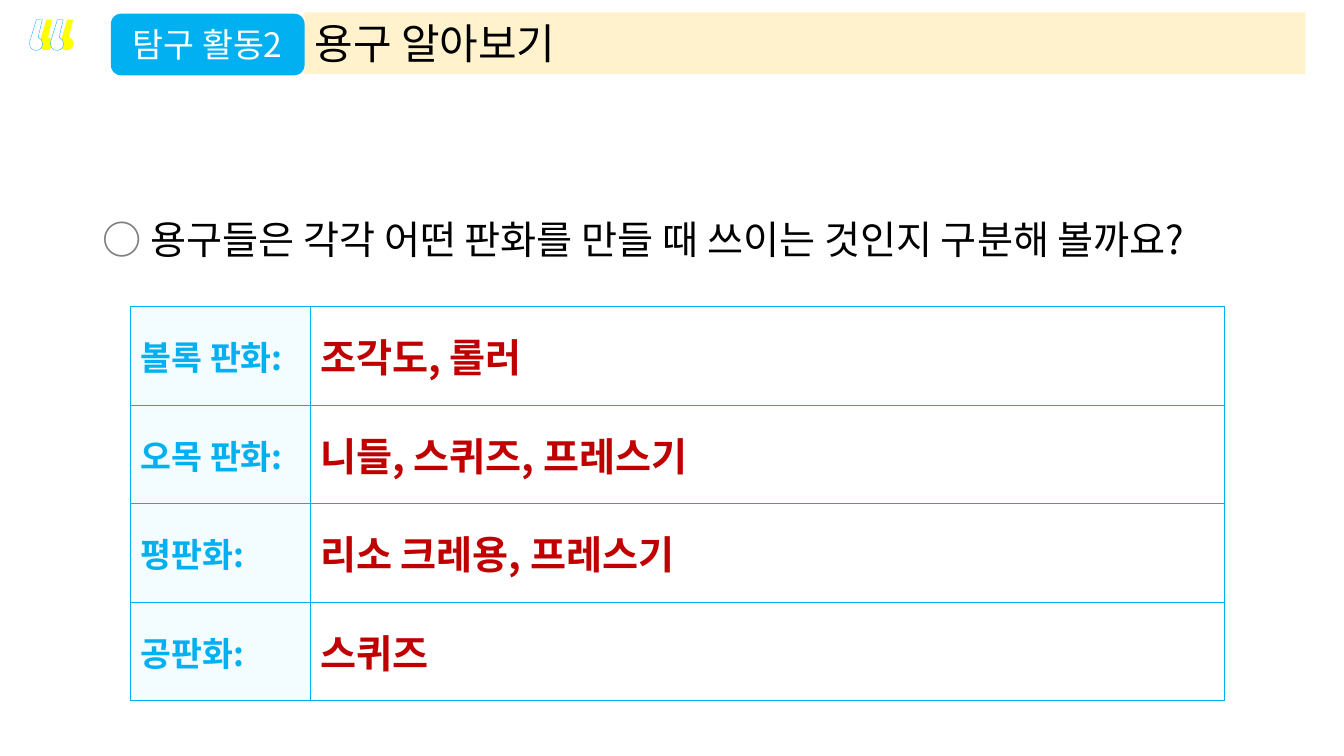
"""Builds a Korean lesson slide that sorts printmaking tools by print type."""
from pptx import Presentation
from pptx import util as u
from pptx.dml.color import RGBColor
from pptx.enum import shapes, text
from pptx.oxml import parse_xml
from pptx.oxml.ns import nsdecls

COLORS = {
    "sky": "00B0F0", "pale": "F3FCFF", "cream": "FFF2CC", "yellow": "FFFF00",
    "white": "FFFFFF", "black": "000000", "gray": "808080", "red": "C00000",
}
KOREAN = "Noto Sans CJK KR"
LATIN = "Montserrat"
PRINTS = [
    ("볼록 판화:", "조각도, 롤러"),
    ("오목 판화:", "니들, 스퀴즈, 프레스기"),
    ("평판화:", "리소 크레용, 프레스기"),
    ("공판화:", "스퀴즈"),
]


def rgb(name):
    """Return the named colour."""
    return RGBColor.from_string(COLORS[name])


def line_xml(tag, width, color):
    """Return a solid line element with a width in points."""
    return parse_xml(
        f'<a:{tag} {nsdecls("a")} w="{u.Pt(width)}"><a:solidFill>'
        f'<a:srgbClr val="{COLORS[color]}"/></a:solidFill></a:{tag}>')


def style(run, size, color, bold=False, face=KOREAN):
    """Format a run, with the face for Latin and East Asian text."""
    run.font.size = u.Pt(size)
    run.font.bold = bold
    run.font.color.rgb = rgb(color)
    run.font.name = face
    run._r.get_or_add_rPr().append(
        parse_xml(f'<a:ea {nsdecls("a")} typeface="{face}"/>'))


def place(part, left, top, width, height):
    """Move and size a shape in points."""
    part.left, part.top = u.Pt(left), u.Pt(top)
    part.width, part.height = u.Pt(width), u.Pt(height)


def add_heading(slide, words):
    """Format the title placeholder as the cream heading bar."""
    heading = slide.shapes.title
    place(heading, 217.4, 8.8, 715, 44)
    heading.fill.solid()
    heading.fill.fore_color.rgb = rgb("cream")
    frame = heading.text_frame
    frame.text = words
    frame.auto_size = text.MSO_AUTO_SIZE.NONE
    frame.vertical_anchor = text.MSO_ANCHOR.MIDDLE
    line = frame.paragraphs[0]
    line.alignment = text.PP_ALIGN.LEFT
    line.line_spacing = 1.0
    style(line.runs[0], 30, "black")


def add_quote(slide, left, color, outline=None):
    """Add one large quotation mark."""
    quote = slide.shapes.add_textbox(
        u.Pt(left), u.Pt(-12.2), u.Pt(57), u.Pt(113.8))
    quote.text_frame.word_wrap = True
    quote.text_frame.text = "“"
    mark = quote.text_frame.paragraphs[0].runs[0]
    style(mark, 88, color, face=LATIN)
    if outline:
        mark._r.get_or_add_rPr().insert(0, line_xml("ln", 1, outline))


def add_badge(slide, words):
    """Add the rounded activity label."""
    badge = slide.shapes.add_shape(
        shapes.MSO_SHAPE.ROUNDED_RECTANGLE,
        u.Pt(79.2), u.Pt(9.8), u.Pt(138.4), u.Pt(44))
    badge.shadow.inherit = False
    badge.fill.solid()
    badge.fill.fore_color.rgb = rgb("sky")
    badge.line.fill.background()
    badge.text_frame.text = words
    badge.text_frame.vertical_anchor = text.MSO_ANCHOR.MIDDLE
    label = badge.text_frame.paragraphs[0]
    label.alignment = text.PP_ALIGN.CENTER
    style(label.runs[0], 24, "white")


def add_question(slide, bullet, words):
    """Add the question with its gray ring."""
    question = slide.shapes.add_textbox(
        u.Pt(66.2), u.Pt(133.2), u.Pt(861), u.Pt(53.3))
    question.text_frame.word_wrap = True
    line = question.text_frame.paragraphs[0]
    line.line_spacing = 1.5
    for part, color, bold in ((bullet, "gray", True), (words, "black", False)):
        run = line.add_run()
        run.text = part
        style(run, 28, color, bold)


def fill_cell(cell, words, size, color, background):
    """Write one table cell with a sky border."""
    cell.text = words
    cell.vertical_anchor = text.MSO_ANCHOR.MIDDLE
    cell.fill.solid()
    cell.fill.fore_color.rgb = rgb(background)
    style(cell.text_frame.paragraphs[0].runs[0], size, color, True)
    for index, side in enumerate(("lnL", "lnR", "lnT", "lnB")):
        cell._tc.get_or_add_tcPr().insert(index, line_xml(side, 0.5, "sky"))


def add_print_table(slide, prints):
    """Add the table of print types and their tools."""
    row_height = 70.4
    table = slide.shapes.add_table(
        len(prints), 2, u.Pt(93.2), u.Pt(219),
        u.Pt(781.6), u.Pt(row_height * len(prints))).table
    table.first_row = table.horz_banding = False
    for column, width in zip(table.columns, (128.2, 653.4)):
        column.width = u.Pt(width)
    for row, (kind, tools) in zip(table.rows, prints):
        row.height = u.Pt(row_height)
        fill_cell(row.cells[0], kind, 24, "sky", "pale")
        fill_cell(row.cells[1], tools, 28, "red", "white")


def main():
    """Build and save the slide."""
    deck = Presentation()
    deck.slide_width, deck.slide_height = u.Pt(960), u.Pt(540)
    slide = deck.slides.add_slide(deck.slide_layouts[5])
    add_heading(slide, "용구 알아보기")
    add_quote(slide, 16.6, "yellow")
    add_quote(slide, 9.4, "white", "sky")
    add_badge(slide, "탐구 활동2")
    add_question(slide, "○ ", "용구들은 각각 어떤 판화를 만들 때 쓰이는 것인지 구분해 볼까요?")
    add_print_table(slide, PRINTS)
    deck.save("out.pptx")


if __name__ == "__main__":
    main()
